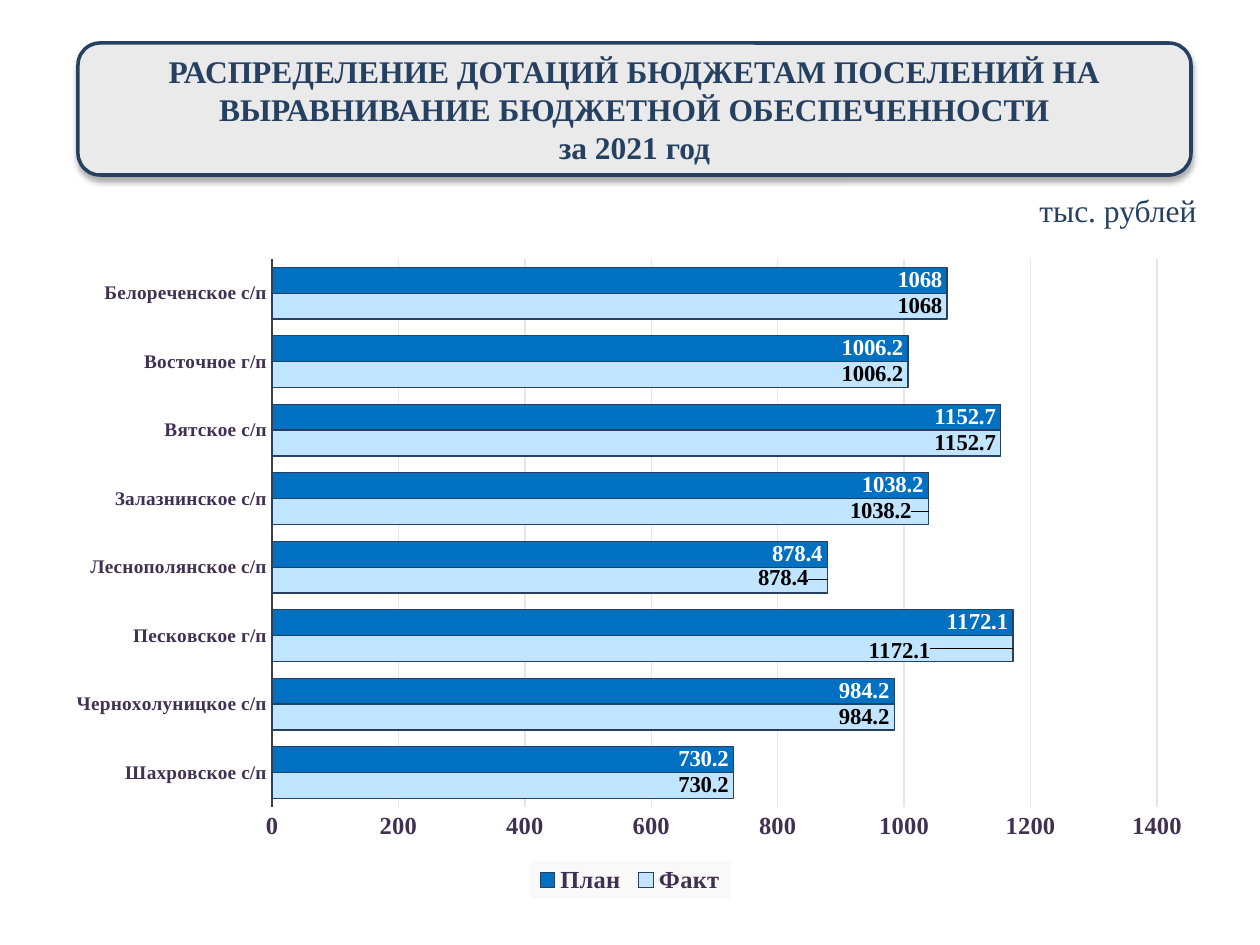
import dataclasses
import typing

import lxml.etree
import pptx
import pptx.chart.data
import pptx.dml.color
import pptx.enum.chart
import pptx.enum.shapes
import pptx.enum.text
import pptx.oxml
import pptx.oxml.ns
import pptx.util

EMU_PER_PX = 914400 / 126
FONT = "Times New Roman"
COLORS = {
    "navy": "254061",
    "panel": "EAEAEA",
    "plan": "0070C0",
    "fact": "C1E4FF",
    "axis_text": "403152",
    "axis_line": "404040",
    "grid": "E6E6E6",
    "legend": "F9F9F9",
    "black": "000000",
    "white": "FFFFFF",
}


@dataclasses.dataclass(frozen=True)
class Area:
    left: int
    top: int
    width: int
    height: int

    def emu(self) -> list[int]:
        return [px(value) for value in dataclasses.astuple(self)]


@dataclasses.dataclass(frozen=True)
class Series:
    name: str
    fill: str
    label_color: str
    label_shifts: dict[int, tuple[int, int]]


TITLE = Area(78, 43, 1113, 132)
UNITS = Area(1027, 185, 223, 50)
CHART = Area(54, 246, 1150, 654)
PLOT = Area(272, 259, 885, 548)
LEGEND = Area(530, 861, 200, 38)

GRANTS = {
    "Шахровское с/п": 730.2,
    "Чернохолуницкое с/п": 984.2,
    "Песковское г/п": 1172.1,
    "Леснополянское с/п": 878.4,
    "Залазнинское с/п": 1038.2,
    "Вятское с/п": 1152.7,
    "Восточное г/п": 1006.2,
    "Белореченское с/п": 1068,
}
SERIES = [
    Series("Факт", "fact", "black", {2: (-78, 3), 3: (-14, -2), 4: (-12, 0)}),
    Series("План", "plan", "white", {}),
]


def px(value: int) -> int:
    return round(value * EMU_PER_PX)


def rgb(name: str) -> pptx.dml.color.RGBColor:
    return pptx.dml.color.RGBColor.from_string(COLORS[name])


def style_font(font: typing.Any, size: int, color: str, bold: bool = True) -> None:
    font.name = FONT
    font.size = pptx.util.Pt(size)
    font.bold = bold
    font.color.rgb = rgb(color)


def style_line(line: typing.Any, color: str, width: float) -> None:
    line.color.rgb = rgb(color)
    line.width = pptx.util.Pt(width)


def write_text(box: typing.Any, text: str, *, size: int, color: str, bold: bool,
               align: typing.Any, anchor: typing.Any) -> None:
    frame = box.text_frame
    frame.word_wrap = True
    frame.vertical_anchor = anchor
    para = frame.paragraphs[0]
    para.text = text
    para.alignment = align
    for span in para.runs:
        style_font(span.font, size, color, bold)


def add_title(page: typing.Any) -> None:
    box = page.shapes.add_shape(
        pptx.enum.shapes.MSO_SHAPE.ROUNDED_RECTANGLE, *TITLE.emu())
    box.fill.solid()
    box.fill.fore_color.rgb = rgb("panel")
    style_line(box.line, "navy", 2)
    box.shadow.inherit = False
    effects = box._element.spPr.find(pptx.oxml.ns.qn("a:effectLst"))
    effects.append(pptx.oxml.parse_xml(
        f'<a:outerShdw {pptx.oxml.ns.nsdecls("a")} blurRad="44450" dist="27940" '
        f'dir="5400000" algn="ctr"><a:srgbClr val="{COLORS["black"]}">'
        '<a:alpha val="32000"/></a:srgbClr></a:outerShdw>'))
    write_text(
        box,
        "РАСПРЕДЕЛЕНИЕ ДОТАЦИЙ БЮДЖЕТАМ ПОСЕЛЕНИЙ НА "
        "ВЫРАВНИВАНИЕ БЮДЖЕТНОЙ ОБЕСПЕЧЕННОСТИ\vза 2021 год",
        size=18, color="navy", bold=True,
        align=pptx.enum.text.PP_ALIGN.CENTER,
        anchor=pptx.enum.text.MSO_ANCHOR.MIDDLE)


def layout_xml(values: dict[str, float], modes: dict[str, str]) -> typing.Any:
    layout = pptx.oxml.parse_xml(f'<c:layout {pptx.oxml.ns.nsdecls("c")}/>')
    manual = lxml.etree.SubElement(layout, pptx.oxml.ns.qn("c:manualLayout"))
    for tag, value in {**modes, **values}.items():
        lxml.etree.SubElement(manual, pptx.oxml.ns.qn(f"c:{tag}")).set("val", str(value))
    return layout


def area_layout(area: Area, modes: dict[str, str]) -> typing.Any:
    return layout_xml({
        "x": round((area.left - CHART.left) / CHART.width, 4),
        "y": round((area.top - CHART.top) / CHART.height, 4),
        "w": round(area.width / CHART.width, 4),
        "h": round(area.height / CHART.height, 4),
    }, {**modes, "xMode": "edge", "yMode": "edge"})


def replace_layout(parent: typing.Any, layout: typing.Any, index: int) -> None:
    for old in parent.findall(pptx.oxml.ns.qn("c:layout")):
        parent.remove(old)
    parent.insert(index, layout)


def style_series(bars: typing.Any, series: Series) -> None:
    bars.format.fill.solid()
    bars.format.fill.fore_color.rgb = rgb(series.fill)
    style_line(bars.format.line, "navy", 0.75)
    inside_end = pptx.enum.chart.XL_LABEL_POSITION.INSIDE_END
    labels = bars.data_labels
    labels.show_value = True
    labels.position = inside_end
    style_font(labels.font, 13, series.label_color)
    for index, (right, down) in series.label_shifts.items():
        label = bars.points[index].data_label
        style_font(label.font, 13, series.label_color)
        label.position = inside_end
        node = bars._element.xpath(f"c:dLbls/c:dLbl[c:idx/@val='{index}']")[0]
        shift = {"x": round(right / CHART.width, 4), "y": round(down / CHART.height, 4)}
        replace_layout(node, layout_xml(shift, {}), 1)


def style_axes(chart: typing.Any) -> None:
    for axis, size in ((chart.category_axis, 11), (chart.value_axis, 14)):
        axis.major_tick_mark = pptx.enum.chart.XL_TICK_MARK.NONE
        axis.minor_tick_mark = pptx.enum.chart.XL_TICK_MARK.NONE
        style_font(axis.tick_labels.font, size, "axis_text")
    style_line(chart.category_axis.format.line, "axis_line", 1.5)
    values = chart.value_axis
    values.minimum_scale, values.maximum_scale, values.major_unit = 0, 1400, 200
    values.format.line.fill.background()
    values.has_major_gridlines = True
    style_line(values.major_gridlines.format.line, "grid", 0.75)


def style_legend(chart: typing.Any) -> None:
    chart.has_legend = True
    legend = chart.legend
    legend.position = pptx.enum.chart.XL_LEGEND_POSITION.BOTTOM
    legend.include_in_layout = False
    style_font(legend.font, 14, "axis_text")
    node = legend._element
    replace_layout(node, area_layout(LEGEND, {}), 1)
    node.find(pptx.oxml.ns.qn("c:overlay")).addnext(pptx.oxml.parse_xml(
        f'<c:spPr {pptx.oxml.ns.nsdecls("c", "a")}><a:solidFill>'
        f'<a:srgbClr val="{COLORS["legend"]}"/></a:solidFill></c:spPr>'))


def add_grants_chart(page: typing.Any) -> None:
    data = pptx.chart.data.CategoryChartData()
    data.categories = list(GRANTS)
    for series in SERIES:
        data.add_series(series.name, list(GRANTS.values()))
    chart = page.shapes.add_chart(
        pptx.enum.chart.XL_CHART_TYPE.BAR_CLUSTERED, *CHART.emu(), data).chart
    chart.has_title = False
    style_font(chart.font, 10, "black", False)
    plot = chart.plots[0]
    plot.gap_width, plot.overlap, plot.vary_by_categories = 65, 0, False
    for bars, series in zip(plot.series, SERIES):
        style_series(bars, series)
    style_axes(chart)
    style_legend(chart)
    plot_area = chart._chartSpace.chart.plotArea
    replace_layout(plot_area, area_layout(PLOT, {"layoutTarget": "inner"}), 0)


def main() -> None:
    deck = pptx.Presentation()
    deck.slide_width, deck.slide_height = px(1260), px(945)
    page = deck.slides.add_slide(deck.slide_layouts[6])
    add_grants_chart(page)
    add_title(page)
    write_text(page.shapes.add_textbox(*UNITS.emu()), "тыс. рублей",
               size=18, color="navy", bold=False,
               align=pptx.enum.text.PP_ALIGN.LEFT,
               anchor=pptx.enum.text.MSO_ANCHOR.TOP)
    deck.save("out.pptx")


if __name__ == "__main__":
    main()
